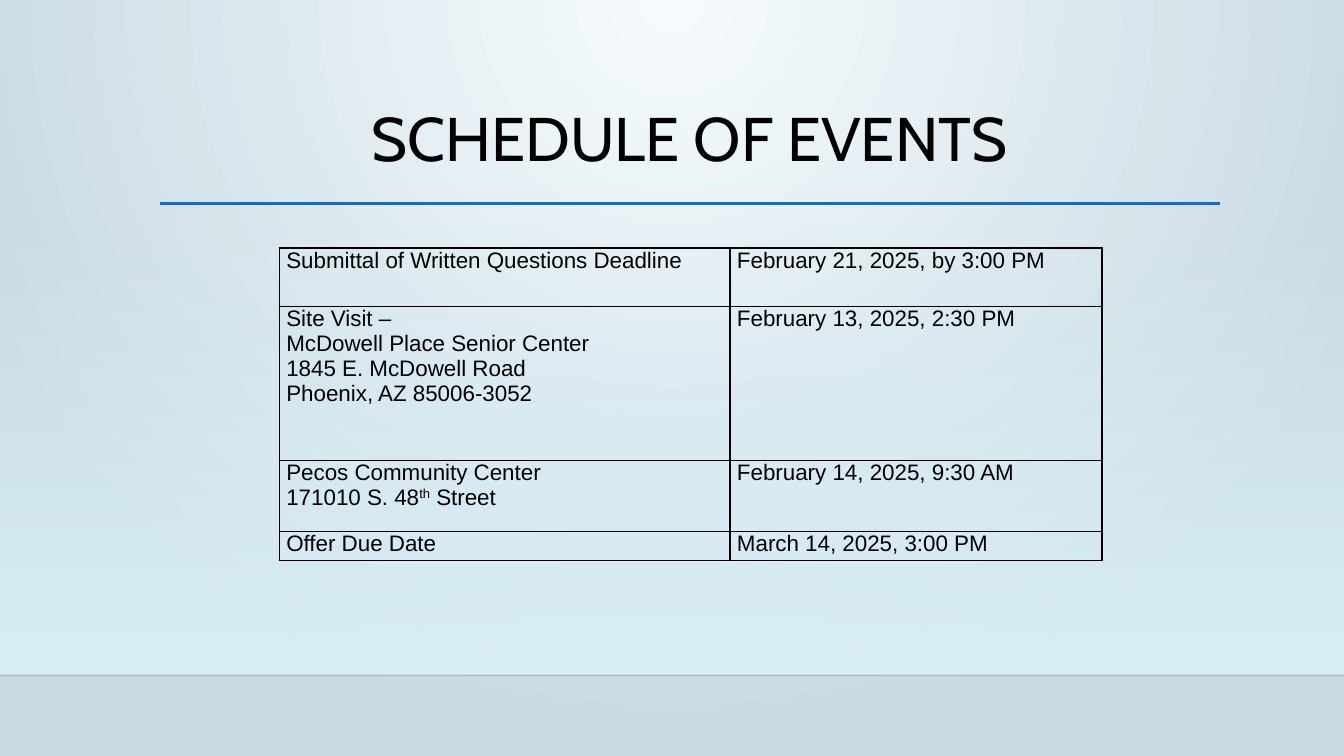
from dataclasses import dataclass
from typing import Any

from lxml.etree import SubElement
from pptx import Presentation
from pptx.dml.color import RGBColor
from pptx.enum.shapes import MSO_CONNECTOR as Connector, MSO_SHAPE as Preset
from pptx.enum.text import MSO_ANCHOR as Anchor, MSO_AUTO_SIZE as AutoSize, PP_ALIGN as Align
from pptx.oxml.ns import qn
from pptx.util import Inches, Pt

WIDTH, HEIGHT = 13.33, 7.5
BLACK = "000000"
TITLE_FORMAT = {"name": "Cabin", "size": Pt(44), "bold": False}
CELL_FORMAT = {"name": "Arial", "size": Pt(16), "bold": False}
COLUMN_WIDTHS = (4.47, 3.69)


@dataclass
class Rule:
    left: float
    right: float
    top: float
    color: str
    weight: float
    opacity: int = 100


@dataclass
class Event:
    height: float
    lines: tuple[str, ...]
    date: str


RULES = (
    Rule(0, WIDTH, 6.7, "000001", 1, 20),
    Rule(1.59, 12.1, 2.02, "0F6FC6", 2.5),
)
EVENTS = (
    Event(0.58, ("Submittal of Written Questions Deadline",), "February 21, 2025, by 3:00 PM"),
    Event(
        1.53,
        ("Site Visit –", "McDowell Place Senior Center", "1845 E. McDowell Road", "Phoenix, AZ 85006-3052"),
        "February 13, 2025, 2:30 PM",
    ),
    Event(0.7, ("Pecos Community Center", "171010 S. 48^th^ Street"), "February 14, 2025, 9:30 AM"),
    Event(0.29, ("Offer Due Date",), "March 14, 2025, 3:00 PM"),
)


def rgb(color: str) -> RGBColor:
    return RGBColor.from_string(color)


def set_all(target: Any, values: dict[str, Any]) -> None:
    for name, value in values.items():
        setattr(target, name, value)


def set_font(font: Any, values: dict[str, Any]) -> None:
    set_all(font, values)
    font.color.rgb = rgb(BLACK)


def set_opacity(parent: Any, percent: int) -> None:
    color = parent.find(".//" + qn("a:srgbClr"))
    SubElement(color, qn("a:alpha"), val=str(percent * 1000))


def set_gradient(fill: Any, colors: tuple[str, str]) -> Any:
    fill.gradient()
    for stop, color in zip(fill.gradient_stops, colors):
        stop.color.rgb = rgb(color)


def draw_background(page: Any) -> None:
    fill = page.background.fill
    set_gradient(fill, ("F6FBFD", "C7D9E2"))
    gradient = page.element.find(".//" + qn("p:bgPr") + "/" + qn("a:gradFill"))
    gradient.remove(gradient.find(qn("a:lin")))
    circle = SubElement(gradient, qn("a:path"), path="circle")
    SubElement(circle, qn("a:fillToRect"), l="43000", t="0", r="43000", b="100000")


def draw_glow(page: Any) -> None:
    glow = page.shapes.add_shape(Preset.RECTANGLE, 0, Inches(2.21), Inches(WIDTH), Inches(4.49))
    glow.shadow.inherit = False
    glow.line.fill.background()
    set_gradient(glow.fill, ("DBEFF9", "DBEFF9"))
    glow.fill.gradient_angle = 270
    stops = glow.element.spPr.findall(".//" + qn("a:gs"))
    for stop, percent in zip(stops, (0, 100)):
        set_opacity(stop, percent)


def draw_rule(page: Any, rule: Rule) -> None:
    line = page.shapes.add_connector(
        Connector.STRAIGHT, Inches(rule.left), Inches(rule.top), Inches(rule.right), Inches(rule.top)
    )
    line.line.color.rgb = rgb(rule.color)
    line.line.width = Pt(rule.weight)
    properties = line.element.spPr
    if rule.opacity < 100:
        set_opacity(properties, rule.opacity)
    SubElement(properties, qn("a:effectLst"))


def draw_title(page: Any) -> None:
    title = page.shapes.title
    set_all(title, {"left": Inches(1.59), "top": Inches(1.02), "width": Inches(10.5), "height": Inches(1.15)})
    frame = title.text_frame
    set_all(frame, {"word_wrap": True, "auto_size": AutoSize.NONE, "vertical_anchor": Anchor.TOP})
    para = frame.paragraphs[0]
    set_all(para, {"alignment": Align.CENTER, "line_spacing": 0.9})
    span = para.add_run()
    span.text = "SCHEDULE OF EVENTS"
    set_font(span.font, TITLE_FORMAT)


def write_line(para: Any, text: str) -> None:
    for index, part in enumerate(text.split("^")):
        span = para.add_run()
        span.text = part
        set_font(span.font, CELL_FORMAT)
        if index % 2:
            span.font._element.set("baseline", "30000")


def fill_cell(cell: Any, lines: tuple[str, ...]) -> None:
    set_all(cell, {
        "margin_left": Inches(0.07),
        "margin_right": Inches(0.07),
        "margin_top": 0,
        "margin_bottom": 0,
        "vertical_anchor": Anchor.TOP,
    })
    properties = cell._tc.get_or_add_tcPr()
    for side in ("lnL", "lnR", "lnT", "lnB"):
        border = SubElement(properties, qn("a:" + side), w=str(Pt(1)))
        SubElement(SubElement(border, qn("a:solidFill")), qn("a:srgbClr"), val=BLACK)
    cell.fill.background()
    frame = cell.text_frame
    for index, text in enumerate(lines):
        para = frame.add_paragraph() if index else frame.paragraphs[0]
        write_line(para, text)


def draw_schedule(page: Any) -> None:
    table = page.shapes.add_table(
        len(EVENTS), len(COLUMN_WIDTHS), Inches(2.77), Inches(2.46),
        Inches(sum(COLUMN_WIDTHS)), Inches(sum(event.height for event in EVENTS)),
    ).table
    set_all(table, {"first_row": False, "horz_banding": False})
    for column, width in zip(table.columns, COLUMN_WIDTHS):
        column.width = Inches(width)
    for row, event in zip(table.rows, EVENTS):
        row.height = Inches(event.height)
        for cell, lines in zip(row.cells, (event.lines, (event.date,))):
            fill_cell(cell, lines)


def main() -> None:
    deck = Presentation()
    set_all(deck, {"slide_width": Inches(WIDTH), "slide_height": Inches(HEIGHT)})
    page = deck.slides.add_slide(deck.slide_layouts[5])
    draw_background(page)
    draw_glow(page)
    for rule in RULES:
        draw_rule(page, rule)
    draw_title(page)
    draw_schedule(page)
    deck.save("out.pptx")


if __name__ == "__main__":
    main()
